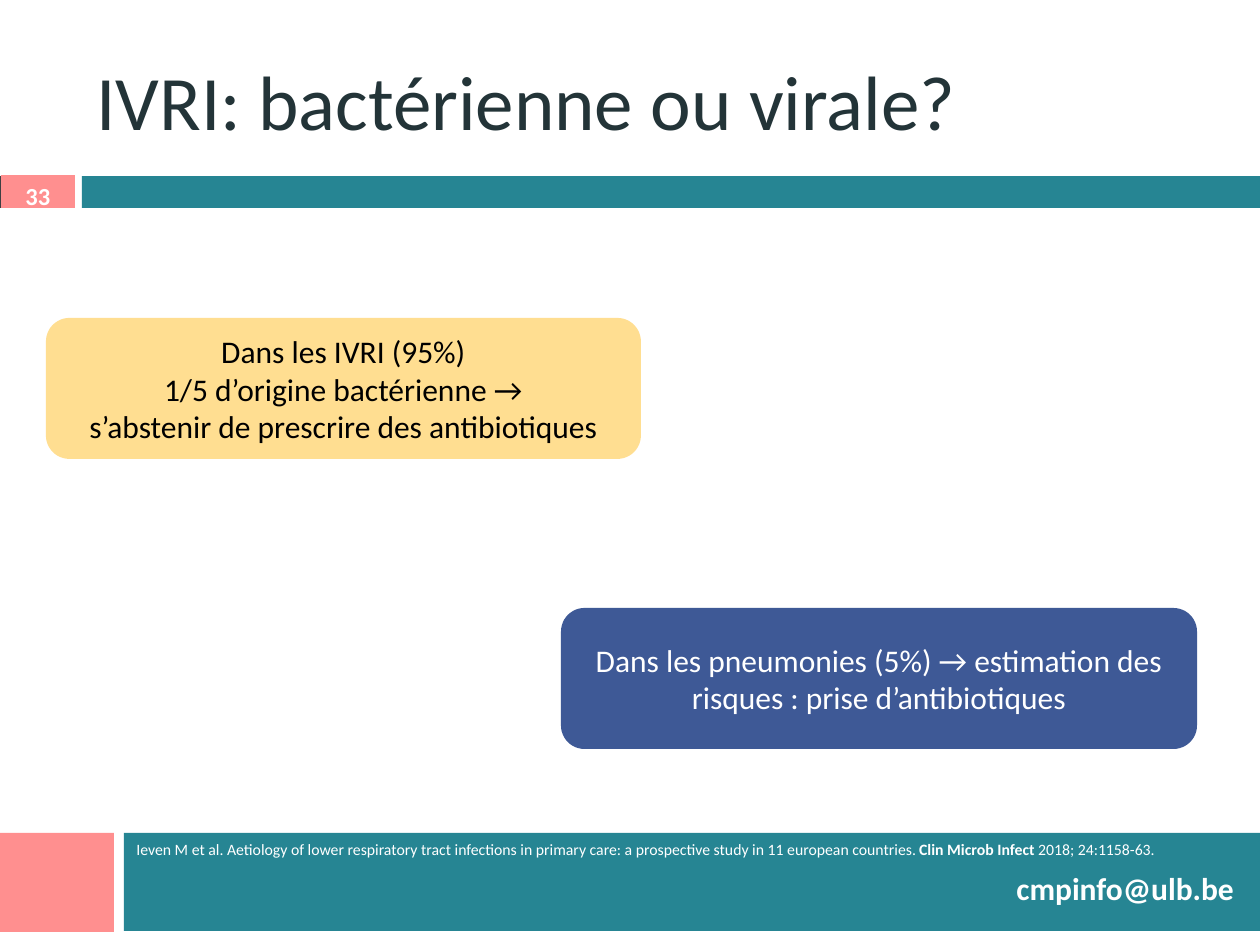
from dataclasses import dataclass

import pptx
import pptx.dml.color
import pptx.enum.shapes
import pptx.enum.text
import pptx.util

PX = 914400 / 126
FONT = "Calibri"
COLORS = {
    "dark": "233438",
    "teal": "268593",
    "pink": "FF8F8F",
    "yellow": "FFDE91",
    "blue": "3E5996",
    "white": "FFFFFF",
    "black": "000000",
}
SHAPE = pptx.enum.shapes.MSO_SHAPE
ALIGN = pptx.enum.text.PP_ALIGN
ANCHOR = pptx.enum.text.MSO_ANCHOR


@dataclass
class Box:
    x: int
    y: int
    w: int
    h: int
    fill: str = ""
    kind: int = SHAPE.RECTANGLE


def px(n: int) -> int:
    return round(n * PX)


def rgb(name: str):
    return pptx.dml.color.RGBColor.from_string(COLORS[name])


def add_box(slide, box: Box):
    at = [px(n) for n in (box.x, box.y, box.w, box.h)]
    if not box.fill:
        return slide.shapes.add_textbox(*at)
    sp = slide.shapes.add_shape(box.kind, *at)
    sp.shadow.inherit = False
    sp.fill.solid()
    sp.fill.fore_color.rgb = rgb(box.fill)
    sp.line.fill.background()
    return sp


def write(sp, *paragraphs, size=18, color="white", bold=False,
          align=ALIGN.LEFT, anchor=ANCHOR.TOP):
    tf = sp.text_frame
    tf.word_wrap = True
    tf.vertical_anchor = anchor
    for i, runs in enumerate(paragraphs):
        p = tf.paragraphs[0] if i == 0 else tf.add_paragraph()
        p.alignment = align
        for text, strong in [(runs, bold)] if isinstance(runs, str) else runs:
            for j, line in enumerate(text.split("\n")):
                if j:
                    p.add_line_break()
                r = p.add_run()
                r.text = line
                r.font.name = FONT
                r.font.size = pptx.util.Pt(size)
                r.font.bold = strong
                r.font.color.rgb = rgb(color)


def main():
    prs = pptx.Presentation()
    prs.slide_width = px(1260)
    prs.slide_height = px(945)
    slide = prs.slides.add_slide(prs.slide_layouts[6])

    for band in (
        Box(0, 176, 73, 32, "dark"),
        Box(82, 176, 1178, 32, "teal"),
        Box(-1, 833, 115, 99, "pink"),
        Box(124, 833, 1136, 98, "teal"),
    ):
        add_box(slide, band)

    number = add_box(slide, Box(1, 175, 74, 33, "pink"))
    write(number, "33", size=14, bold=True, align=ALIGN.CENTER)

    email = add_box(slide, Box(1004, 863, 256, 50))
    write(email, "cmpinfo@ulb.be", bold=True)

    title = add_box(slide, Box(84, 32, 1124, 136))
    write(title, "IVRI: bactérienne ou virale?", size=44, color="dark",
          anchor=ANCHOR.MIDDLE)

    citation = add_box(slide, Box(124, 834, 1074, 97))
    write(citation, [
        ("Ieven M et al. Aetiology of lower respiratory tract infections in "
         "primary care: a prospective study in 11 european countries. ", False),
        ("Clin Microb Infect ", True),
        ("2018; 24:1158-63.", False),
    ], size=9)

    ivri = add_box(slide, Box(46, 318, 595, 141, "yellow",
                              SHAPE.ROUNDED_RECTANGLE))
    write(ivri, "Dans les IVRI (95%)",
          "1/5 d’origine bactérienne →\n"
          "s’abstenir de prescrire des antibiotiques",
          color="black", align=ALIGN.CENTER, anchor=ANCHOR.MIDDLE)

    pneumonia = add_box(slide, Box(561, 608, 636, 141, "blue",
                                   SHAPE.ROUNDED_RECTANGLE))
    write(pneumonia, "Dans les pneumonies (5%) → estimation des risques : "
          "prise d’antibiotiques",
          align=ALIGN.CENTER, anchor=ANCHOR.MIDDLE)

    prs.save("out.pptx")


if __name__ == "__main__":
    main()
